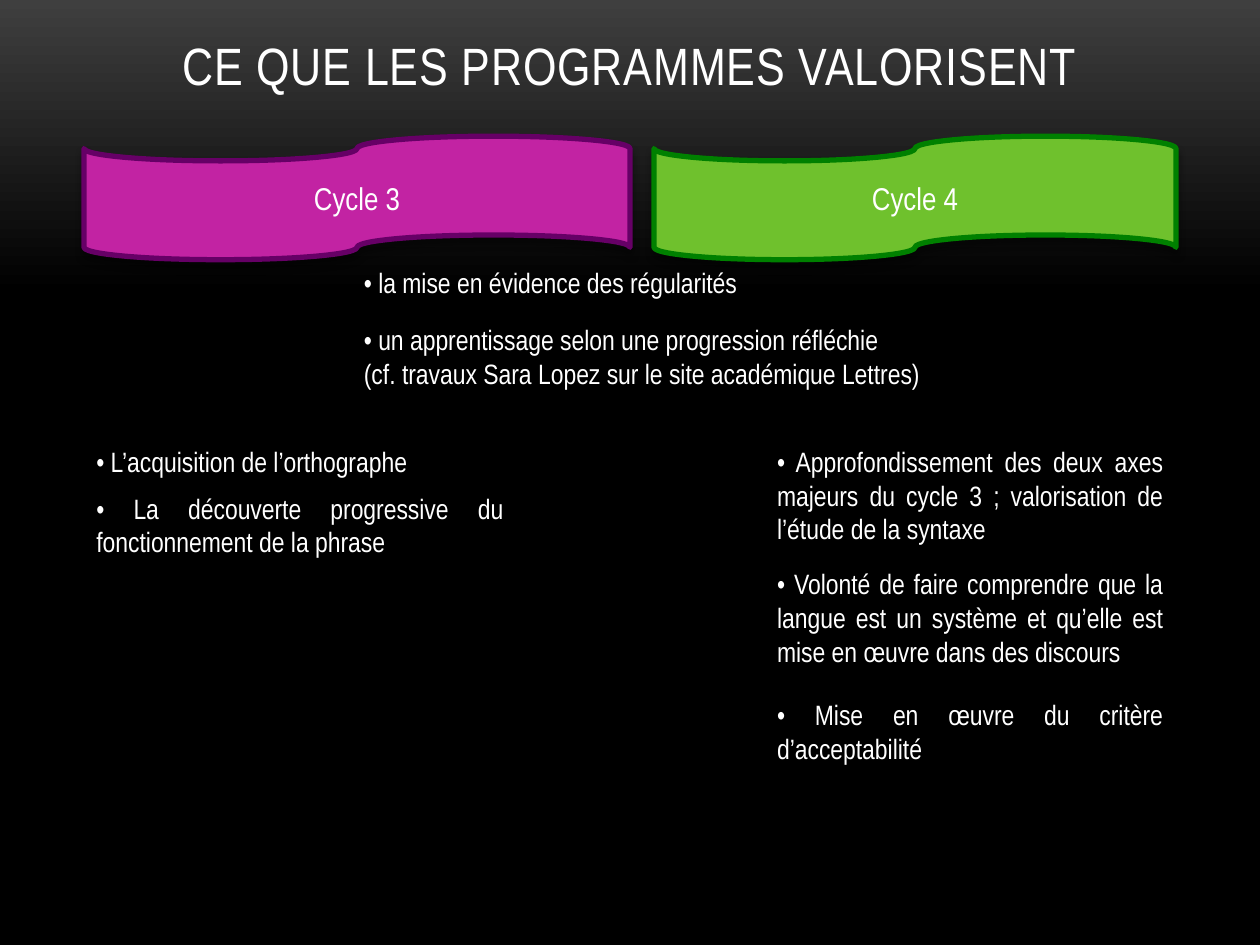
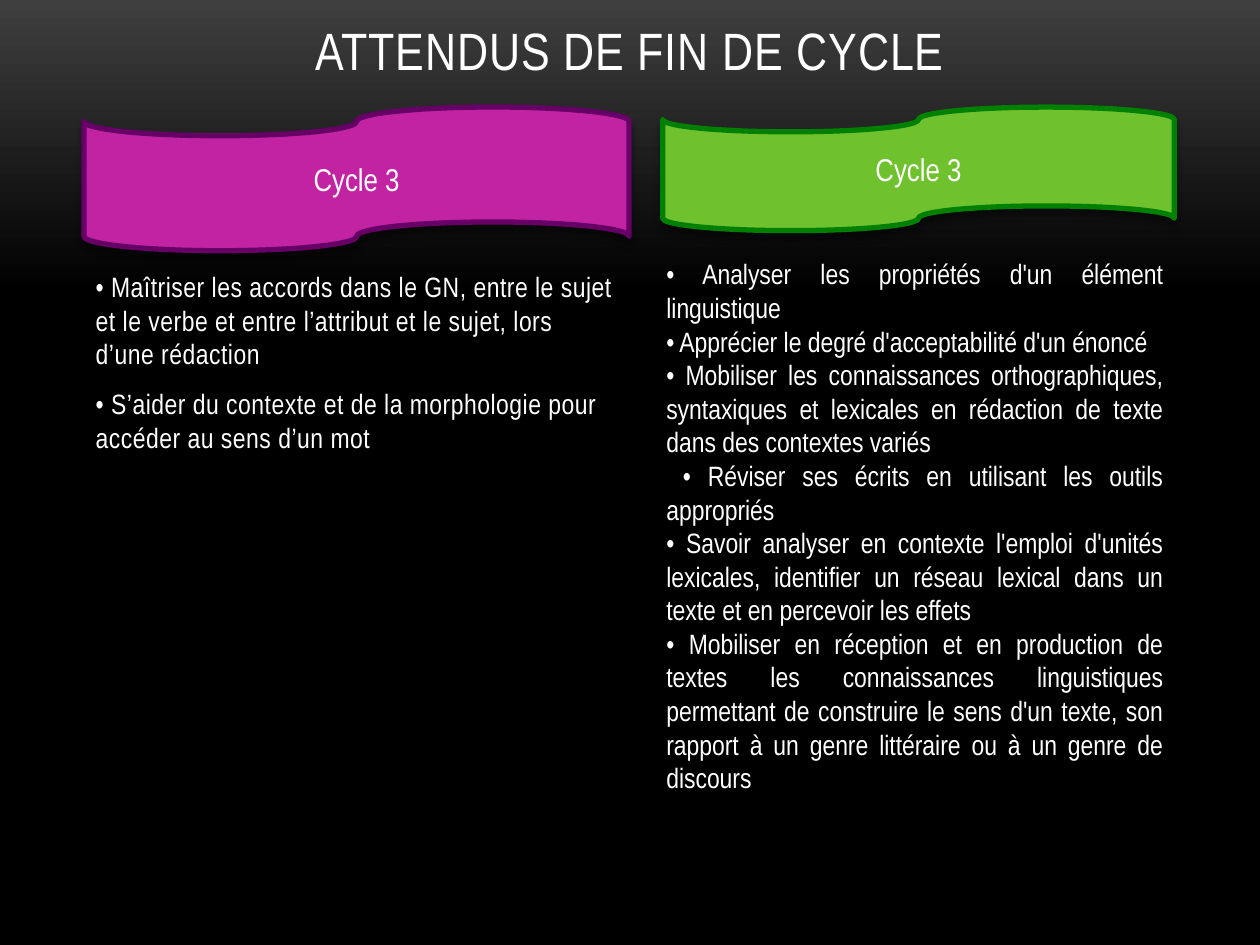
from dataclasses import dataclass

from lxml import etree
from pptx import Presentation
from pptx.dml.color import RGBColor
from pptx.enum import shapes, text
from pptx.oxml import ns
from pptx.util import Pt


@dataclass(frozen=True)
class Theme:
    font: str = "Arial Narrow"
    ink: str = "FFFFFF"
    glow: str = "3F3F3F"
    ground: str = "000000"
    purple: tuple = ("C223A3", "660066")  # fill, outline
    green: tuple = ("6FC12D", "008000")
    title_size: float = 30
    ribbon_size: float = 18
    body_size: float = 16
    left: float = 48
    width: float = 624


THEME = Theme()
RIGHT = THEME.left + THEME.width
ALIGN = text.PP_ALIGN


# Shared helpers
def rgb(code):
    return RGBColor.from_string(code)


def place(shape, left, top, width, height):
    shape.left, shape.top = Pt(left), Pt(top)
    shape.width, shape.height = Pt(width), Pt(height)


def add_run(paragraph, words, size, spacing=0):
    run = paragraph.add_run()
    run.text = words
    run.font.name = THEME.font
    run.font.size = Pt(size)
    run.font.color.rgb = rgb(THEME.ink)
    if spacing:
        run.font._element.set("spc", str(round(spacing * 100)))


def write(frame, lines, size, align, spacing=0):
    """Write one paragraph per line and return the paragraphs."""
    for number, line in enumerate(lines):
        paragraph = frame.paragraphs[0] if number == 0 else frame.add_paragraph()
        paragraph.alignment = align
        add_run(paragraph, line, size, spacing)
    return frame.paragraphs


def set_background(master):
    fill = master.background.fill
    fill.gradient()
    fill.gradient_angle = 270
    for stop, color, position in zip(
            fill.gradient_stops, (THEME.glow, THEME.ground), (0, 0.31)):
        stop.color.rgb = rgb(color)
        stop.position = position


# Slide elements
def set_title(slide, words, top, height):
    title = slide.shapes.title
    place(title, THEME.left, top, THEME.width, height)
    frame = title.text_frame
    frame.auto_size = text.MSO_AUTO_SIZE.NONE
    frame.vertical_anchor = text.MSO_ANCHOR.BOTTOM
    write(frame, [words], THEME.title_size, ALIGN.CENTER, 0.5)


def add_shadow(shape):
    effects = shape._element.spPr.find(ns.qn("a:effectLst"))
    shadow = etree.SubElement(
        effects, ns.qn("a:outerShdw"), blurRad=str(Pt(4)), dist=str(Pt(3.4)),
        dir="5400000", rotWithShape="0")
    color = etree.SubElement(shadow, ns.qn("a:srgbClr"), val="000000")
    etree.SubElement(color, ns.qn("a:alpha"), val="40000")


def add_ribbon(slide, label, colors, left, top, right, height):
    ribbon = slide.shapes.add_shape(
        shapes.MSO_SHAPE.FLOWCHART_PUNCHED_TAPE,
        Pt(left), Pt(top), Pt(right - left), Pt(height))
    ribbon.shadow.inherit = False
    add_shadow(ribbon)
    fill, outline = colors
    ribbon.fill.solid()
    ribbon.fill.fore_color.rgb = rgb(fill)
    ribbon.line.color.rgb = rgb(outline)
    ribbon.line.width = Pt(3)
    ribbon.text_frame.vertical_anchor = text.MSO_ANCHOR.MIDDLE
    write(ribbon.text_frame, [label], THEME.ribbon_size, ALIGN.CENTER)


def add_points(slide, lines, left, top, width, height,
               align=ALIGN.JUSTIFY, wrap=True):
    box = slide.shapes.add_textbox(Pt(left), Pt(top), Pt(width), Pt(height))
    frame = box.text_frame
    frame.word_wrap = wrap
    frame.auto_size = text.MSO_AUTO_SIZE.SHAPE_TO_FIT_TEXT
    return write(frame, lines, THEME.body_size, align)


def fill_body(slide, lines, left, top, width, height):
    body = slide.placeholders[1]
    place(body, left, top, width, height)
    frame = body.text_frame
    frame.auto_size = text.MSO_AUTO_SIZE.NONE
    paragraphs = write(frame, lines, THEME.body_size, ALIGN.LEFT, 0.3)
    for number, paragraph in enumerate(paragraphs):
        properties = paragraph._element.get_or_add_pPr()
        properties.set("marL", "0")
        properties.set("indent", "0")
        etree.SubElement(properties, ns.qn("a:buNone"))
        paragraph.space_before = Pt(3.2 if number else 0)
        paragraph.space_after = Pt(6)


# Slides
def build_programmes(slide):
    set_title(slide, "CE QUE LES PROGRAMMES VALORISENT", 3, 55.4)
    add_ribbon(slide, "Cycle 3", THEME.purple, THEME.left, 77.8, 360, 70.6)
    add_ribbon(slide, "Cycle 4", THEME.green, 373.7, 77.8, RIGHT, 70.6)

    # Points common to both cycles
    shared_left = 200.9
    add_points(slide, ["• la mise en évidence des régularités"],
               shared_left, 148.3, 376.6, 26.6, ALIGN.LEFT)
    add_points(slide, ["• un apprentissage selon une progression réfléchie",
                       "(cf. travaux Sara Lopez sur le site académique Lettres)"],
               shared_left, 180.7, 336.2, 46, ALIGN.LEFT, wrap=False)

    # Cycle 3
    add_points(slide, ["• L’acquisition de l’orthographe"],
               THEME.left, 250.6, 194.4, 26.6, wrap=False)
    add_points(slide, ["• La découverte progressive du fonctionnement de la phrase"],
               THEME.left, 277.2, 247, 46)

    # Cycle 4
    cycle4_left = 437
    cycle4_points = [
        (250.6, 65.5, "• Approfondissement des deux axes majeurs du cycle 3 ; "
                      "valorisation de l’étude de la syntaxe"),
        (320.4, 65.5, "• Volonté de faire comprendre que la langue est un système "
                      "et qu’elle est mise en œuvre dans des discours"),
        (395.3, 46, "• Mise en œuvre du critère d’acceptabilité"),
    ]
    for top, height, point in cycle4_points:
        add_points(slide, [point], cycle4_left, top, RIGHT - cycle4_left, height)


def build_expectations(slide):
    set_title(slide, "ATTENDUS DE FIN DE CYCLE", 0, 49.7)
    fill_body(slide, [
        "• Maîtriser les accords dans le GN, entre le sujet et le verbe et entre "
        "l’attribut et le sujet, lors d’une rédaction",
        "• S’aider du contexte et de la morphologie pour accéder au sens d’un mot",
    ], 47.5, 150.5, 311.8, 305.3)
    add_ribbon(slide, "Cycle 3", THEME.purple, THEME.left, 61.2, 359.5, 82.1)

    skills_left = 373.7
    skills = add_points(slide, [
        "• Analyser les propriétés d'un élément linguistique",
        "• Apprécier le degré d'acceptabilité d'un énoncé",
        "• Mobiliser les connaissances orthographiques, syntaxiques et lexicales "
        "en rédaction de texte dans des contextes variés",
        "• Réviser ses écrits en utilisant les outils appropriés",
        "• Savoir analyser en contexte l'emploi d'unités lexicales, identifier un "
        "réseau lexical dans un texte et en percevoir les effets",
        "• Mobiliser en réception et en production de textes les connaissances "
        "linguistiques permettant de construire le sens d'un texte, son rapport "
        "à un genre littéraire ou à un genre de discours",
    ], skills_left, 143.3, RIGHT - skills_left, 339.1)
    # The revision skill starts slightly further in
    skills[3]._element.get_or_add_pPr().set("indent", str(Pt(9.5)))
    add_ribbon(slide, "Cycle 3", THEME.green, 378.7, 61.2, 671, 70.6)


def main():
    deck = Presentation()
    deck.slide_width, deck.slide_height = Pt(720), Pt(540)
    set_background(deck.slide_master)
    title_only, title_and_body = deck.slide_layouts[5], deck.slide_layouts[1]
    build_programmes(deck.slides.add_slide(title_only))
    build_expectations(deck.slides.add_slide(title_and_body))
    deck.save("out.pptx")


if __name__ == "__main__":
    main()
